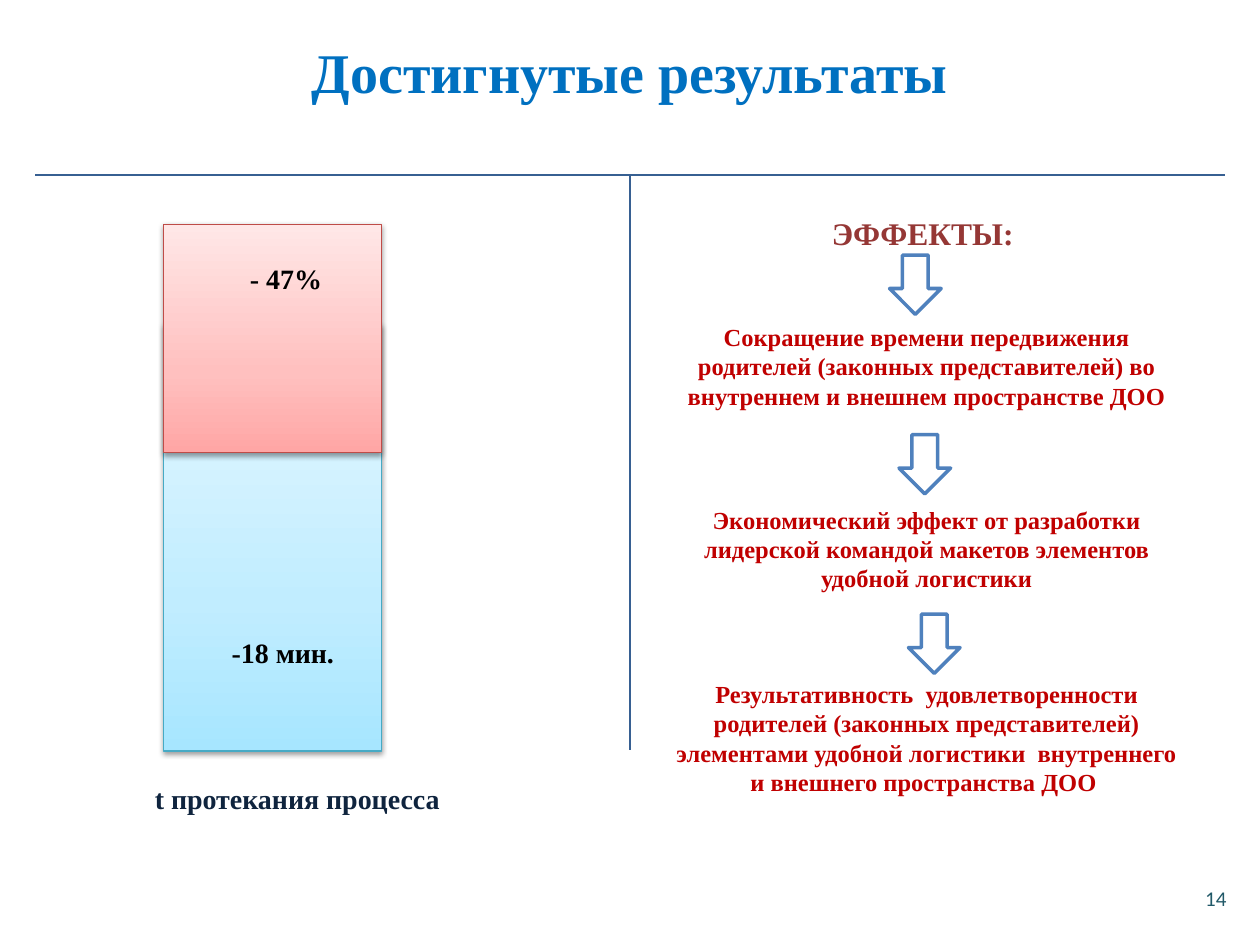
from copy import deepcopy

from lxml import etree
from pptx import Presentation
from pptx.dml.color import RGBColor
from pptx.enum.shapes import MSO_CONNECTOR, MSO_SHAPE
from pptx.enum.text import MSO_ANCHOR, PP_ALIGN
from pptx.oxml.ns import qn
from pptx.util import Inches, Pt

RECT, DOWN_ARROW = MSO_SHAPE.RECTANGLE, MSO_SHAPE.DOWN_ARROW
STRAIGHT = MSO_CONNECTOR.STRAIGHT
TOP, MIDDLE, BOTTOM = MSO_ANCHOR.TOP, MSO_ANCHOR.MIDDLE, MSO_ANCHOR.BOTTOM
CENTER = PP_ALIGN.CENTER

THEME = {
    "serif": "Times New Roman", "sans": "Calibri",
    "title": (32, "0070C0"), "heading": (18, "953735"), "effect": (14, "C00000"),
    "value": (16, "000000"), "caption": (16, "0F243E"), "number": (12, "215968"),
    "rule": "376092", "arrow_fill": "FFFFFF", "arrow_line": "4F81BD",
    "time": (("A7E6FF", "C1EDFF", "E7F8FF"), "46AAC5"),
    "saving": (("FFA6A5", "FFC0BF", "FFE7E7"), "BF4C48"),
}
STOPS = (0, 0.35, 1)

# Positions are percentages of the slide's width and height.
BARS = [("time", (13, 34.27, 17.3, 45.2)), ("saving", (13, 23.73, 17.3, 24.13))]
RULES = [(2.8, 18.53, 97.2, 18.53), (50, 18.53, 50, 79.33)]
ARROW, ARROW_STEP, ARROW_COUNT = (70.6, 27, 4.1, 6.27), (0.75, 19), 3

LABELS = [
    ("Достигнутые результаты", "title", (1.2, 2.8, 97.6, 9.47), MIDDLE),
    ("- 47%", "value", (15.2, 27.07, 15, 4.93), TOP),
    ("-18 мин.", "value", (14.6, 52.13, 15.7, 19.33), BOTTOM),
    ("t протекания процесса", "caption", (10.6, 82, 26, 4.93), TOP),
]
NUMBER = ("14", "number", (94.6, 92.93, 3.8, 4.13), MIDDLE)
EFFECTS_BOX = (52.4, 22, 42.3, 77.33)
EFFECTS = [
    ("ЭФФЕКТЫ:\u00a0", "heading", 0),
    ("Сокращение времени передвижения родителей (законных представителей) "
     "во внутреннем и внешнем пространстве ДОО", "effect", 40),
    ("Экономический эффект от разработки лидерской командой макетов "
     "элементов удобной логистики", "effect", 54),
    ("Результативность  удовлетворенности родителей (законных представителей) "
     "элементами удобной логистики  внутреннего и внешнего пространства ДОО ",
     "effect", 49),
]

prs = Presentation()
prs.slide_width, prs.slide_height = Inches(10), Inches(7.5)
slide = prs.slides.add_slide(prs.slide_layouts[6])


def place(box):
    sizes = (prs.slide_width, prs.slide_height) * 2
    return [round(share * size / 100) for share, size in zip(box, sizes)]


def rgb(value):
    return RGBColor.from_string(value)


def add_box(box, anchor):
    tf = slide.shapes.add_textbox(*place(box)).text_frame
    tf.word_wrap = True
    tf.vertical_anchor = anchor
    return tf


def style(p, role, font="serif", bold=True):
    size, color = THEME[role]
    p.alignment = CENTER
    for r in p.runs:
        r.font.name, r.font.size, r.font.bold = THEME[font], Pt(size), bold
        r.font.color.rgb = rgb(color)


def add_shadow(sp):
    effects = etree.SubElement(sp._element.spPr, qn("a:effectLst"))
    shadow = etree.SubElement(effects, qn("a:outerShdw"), blurRad=str(Pt(3.1)),
                              dist=str(Pt(1.6)), dir="5400000", rotWithShape="0")
    color = etree.SubElement(shadow, qn("a:srgbClr"), val="000000")
    etree.SubElement(color, qn("a:alpha"), val="38000")


def add_bar(role, box):
    colors, line = THEME[role]
    sp = slide.shapes.add_shape(RECT, *place(box))
    sp.fill.gradient()
    sp.fill.gradient_angle = 90
    stop_list = sp._element.spPr.find(".//" + qn("a:gsLst"))
    stop_list.append(deepcopy(stop_list[0]))
    for stop, position, color in zip(sp.fill.gradient_stops, STOPS, colors):
        stop.position = position
        stop.color.rgb = rgb(color)
    sp.line.color.rgb, sp.line.width = rgb(line), Pt(0.75)
    add_shadow(sp)


def add_rule(ends, width):
    line = slide.shapes.add_connector(STRAIGHT, *place(ends))
    line.line.color.rgb, line.line.width = rgb(THEME["rule"]), Pt(width)
    etree.SubElement(line._element.spPr, qn("a:effectLst"))


def add_arrow(i):
    x, y, w, h = ARROW
    dx, dy = ARROW_STEP
    sp = slide.shapes.add_shape(DOWN_ARROW, *place((x + i * dx, y + i * dy, w, h)))
    sp.shadow.inherit = False
    sp.fill.solid()
    sp.fill.fore_color.rgb = rgb(THEME["arrow_fill"])
    sp.line.color.rgb, sp.line.width = rgb(THEME["arrow_line"]), Pt(2)


for role, box in BARS:
    add_bar(role, box)
for ends in RULES:
    add_rule(ends, 1.5)
for text, role, box, anchor in LABELS:
    tf = add_box(box, anchor)
    tf.text = text
    style(tf.paragraphs[0], role)

tf = add_box(EFFECTS_BOX, TOP)
for i, (text, role, gap) in enumerate(EFFECTS):
    p = tf.add_paragraph() if i else tf.paragraphs[0]
    p.text = text
    p.space_before = Pt(gap)
    style(p, role)
for i in range(ARROW_COUNT):
    add_arrow(i)

text, role, box, anchor = NUMBER
tf = add_box(box, anchor)
tf.margin_left = tf.margin_right = 0
tf.text = text
style(tf.paragraphs[0], role, "sans", False)

prs.save("out.pptx")
